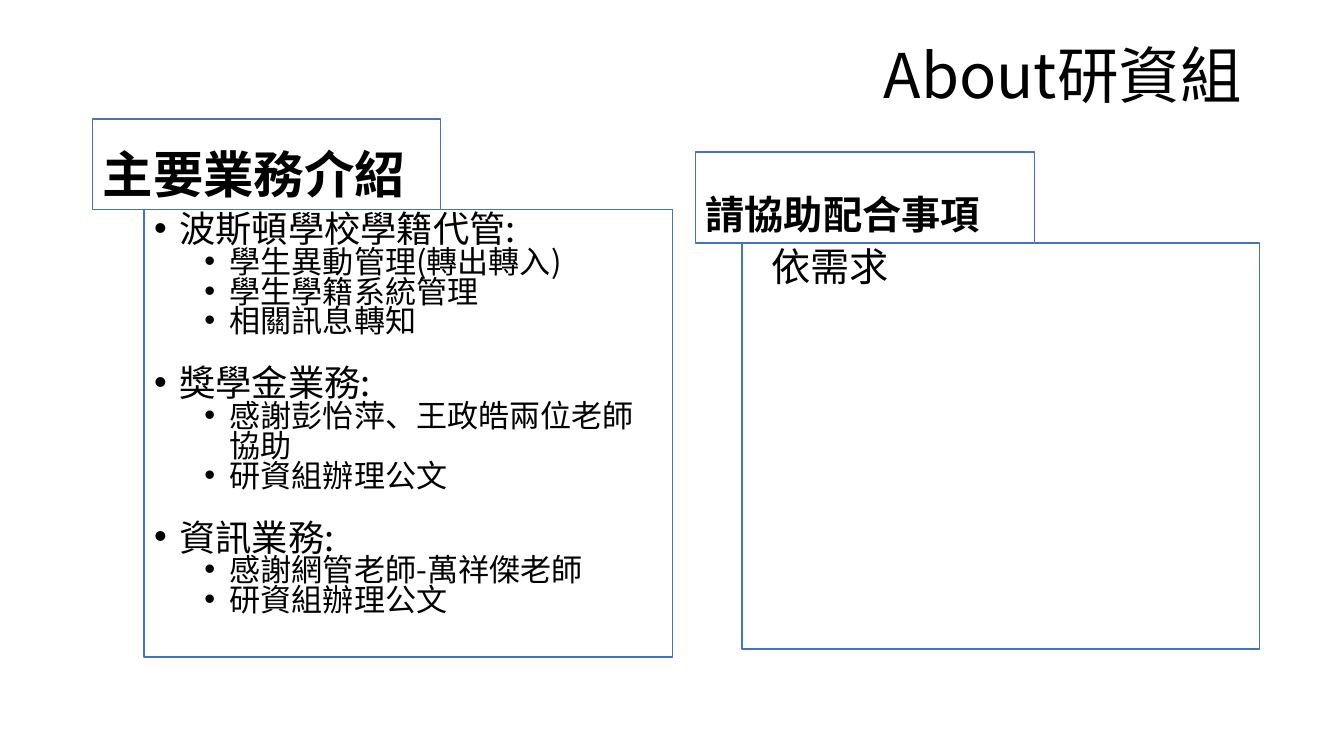
from lxml import etree
from pptx import Presentation
from pptx import util as u
from pptx.dml.color import RGBColor
from pptx.enum import shapes, text
from pptx.oxml.ns import qn

COLORS = {"ink": "000000", "paper": "FFFFFF", "border": "4472C4"}
FONT = "Noto Sans CJK TC"
TAB_HEIGHT = 0.9
DUTIES = [
    ("波斯頓學校學籍代管:", ["學生異動管理(轉出轉入)", "學生學籍系統管理", "相關訊息轉知"]),
    ("獎學金業務:", ["感謝彭怡萍、王政皓兩位老師協助", "研資組辦理公文"]),
    ("資訊業務:", ["感謝網管老師-萬祥傑老師", "研資組辦理公文"]),
]


def color(name):
    return RGBColor.from_string(COLORS[name])


def set_all(target, values):
    for name, value in values.items():
        setattr(target, name, value)


def set_indent(para, left, first, bullet=False):
    properties = para._p.get_or_add_pPr()
    properties.set("marL", str(u.Inches(left)))
    properties.set("indent", str(u.Inches(first)))
    if bullet:
        etree.SubElement(properties, qn("a:buFont")).set("typeface", "Arial")
        etree.SubElement(properties, qn("a:buChar")).set("char", "•")


def write(para, words, size, bold=False, **layout):
    set_all(para, {"line_spacing": 0.9, "alignment": text.PP_ALIGN.LEFT, **layout})
    span = para.add_run()
    span.text = words
    set_all(span.font, {"name": FONT, "size": u.Pt(size), "bold": bold})
    span.font.color.rgb = color("ink")
    etree.SubElement(span._r.get_or_add_rPr(), qn("a:ea")).set("typeface", FONT)


def add_panel(page, box, anchor):
    panel = page.shapes.add_shape(
        shapes.MSO_SHAPE.RECTANGLE, *(u.Inches(length) for length in box))
    panel.shadow.inherit = False
    panel.fill.solid()
    panel.fill.fore_color.rgb = color("paper")
    panel.line.color.rgb = color("border")
    panel.line.width = u.Pt(1)
    set_all(panel.text_frame, {"word_wrap": True, "vertical_anchor": anchor})
    return panel.text_frame


def add_title(page, box, words):
    frame = page.shapes.add_textbox(*(u.Inches(length) for length in box)).text_frame
    set_all(frame, {"word_wrap": True, "vertical_anchor": text.MSO_ANCHOR.MIDDLE})
    write(frame.paragraphs[0], words, 44, alignment=text.PP_ALIGN.RIGHT)


def add_section(page, box, heading, size, tab_width, inset):
    left, top, width, height = box
    tab = add_panel(page, (left, top, tab_width, TAB_HEIGHT), text.MSO_ANCHOR.BOTTOM)
    write(tab.paragraphs[0], heading, size, bold=True)
    body = (left + inset, top + TAB_HEIGHT, width - inset, height - TAB_HEIGHT)
    return add_panel(page, body, text.MSO_ANCHOR.TOP)


def fill_duties(frame, duties):
    para = frame.paragraphs[0]
    for number, (duty, tasks) in enumerate(duties):
        if number:
            para = frame.add_paragraph()
        write(para, duty, 25.9, line_spacing=0.8, space_before=u.Pt(21.4 if number else 0))
        set_indent(para, 0.25, -0.25, bullet=True)
        for task in tasks:
            para = frame.add_paragraph()
            write(para, task, 22.2, line_spacing=0.8, level=1)
            set_indent(para, 0.75, -0.25, bullet=True)


def main():
    deck = Presentation()
    set_all(deck, {"slide_width": u.Inches(13.33), "slide_height": u.Inches(7.5)})
    page = deck.slides.add_slide(deck.slide_layouts[6])
    add_title(page, (0.92, 0.05, 11.5, 1.45), "About研資組")
    duties = add_section(page, (0.92, 1.18, 5.75, 5.34), "主要業務介紹", 36, 3.45, 0.51)
    fill_duties(duties, DUTIES)
    requests = add_section(page, (6.9, 1.51, 5.59, 4.93), "請協助配合事項", 28, 3.36, 0.46)
    write(requests.paragraphs[0], "依需求", 28)
    set_indent(requests.paragraphs[0], 0.25, -0.06)
    deck.save("out.pptx")


if __name__ == "__main__":
    main()
